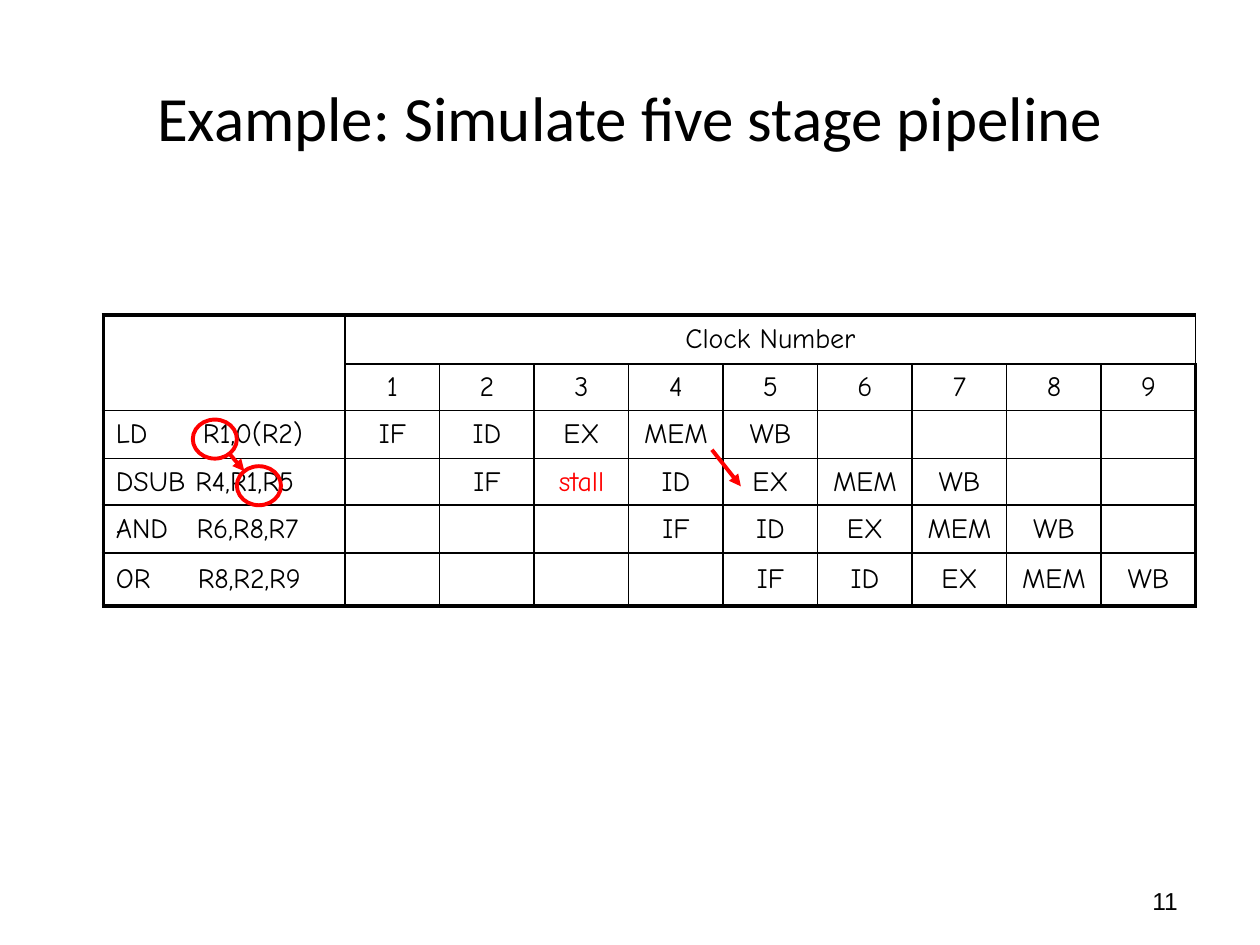
"""Builds a slide that traces four instructions through a five stage pipeline."""
from lxml import etree
from pptx import Presentation, util as u
from pptx.dml.color import RGBColor
from pptx.enum import shapes, text
from pptx.oxml import ns

COLUMNS, ROWS = 100, 75
SLIDE_WIDTH, SLIDE_HEIGHT = u.Inches(10), u.Inches(7.5)
BLACK, RED = "000000", "FF0000"
THIN, THICK = u.Pt(1), u.Pt(2.25)
CYCLES = 9
LABEL_WIDTH, CYCLE_WIDTH = 19.2, 7.5
ROW_HEIGHTS = [3.9, 3.7, 3.8, 3.7, 3.8, 4.2]
PROGRAM = [
    ("LD", "R1,0(R2)", 6.9, 1, ["IF", "ID", "EX", "MEM", "WB"]),
    ("DSUB", "R4,R1,R5", 6.3, 2, ["IF", "stall", "ID", "EX", "MEM", "WB"]),
    ("AND", "R6,R8,R7", 6.4, 4, ["IF", "ID", "EX", "MEM", "WB"]),
    ("OR", "R8,R2,R9", 6.5, 5, ["IF", "ID", "EX", "MEM", "WB"]),
]


def color(hex_string):
    """Turn a hex string into a colour."""
    return RGBColor.from_string(hex_string)


def across(columns):
    """Length of a number of grid columns."""
    return u.Emu(round(SLIDE_WIDTH * columns / COLUMNS))


def down(rows):
    """Length of a number of grid rows."""
    return u.Emu(round(SLIDE_HEIGHT * rows / ROWS))


def place(box):
    """Turn a grid box into left, top, width and height."""
    left, top, width, height = box
    return across(left), down(top), across(width), down(height)


def add_run(paragraph, words, size, font, hex_string=BLACK):
    """Add one formatted run."""
    run = paragraph.add_run()
    run.text = words
    run.font.size, run.font.name = u.Pt(size), font
    run.font.color.rgb = color(hex_string)


def add_line_of_text(slide, box, words, size, font, align):
    """Place one line of text in the middle of a box."""
    frame = slide.shapes.add_textbox(*place(box)).text_frame
    frame.word_wrap = True
    frame.vertical_anchor = text.MSO_ANCHOR.MIDDLE
    frame.paragraphs[0].alignment = align
    add_run(frame.paragraphs[0], words, size, font)


def set_borders(cell, **widths):
    """Draw the black borders of a cell, one width for each side."""
    properties = cell._tc.get_or_add_tcPr()
    for index, side in enumerate("LRTB"):
        border = etree.Element(ns.qn(f"a:ln{side}"), w=str(widths[side]))
        fill = etree.SubElement(border, ns.qn("a:solidFill"))
        etree.SubElement(fill, ns.qn("a:srgbClr"), val=BLACK)
        properties.insert(index, border)


def write_cell(cell, words, align=text.PP_ALIGN.CENTER, hex_string=BLACK):
    """Write one entry of the pipeline table and return its paragraph."""
    cell.margin_top = cell.margin_bottom = u.Inches(0.05)
    paragraph = cell.text_frame.paragraphs[0]
    paragraph.alignment, paragraph.space_before = align, u.Pt(3.2)
    add_run(paragraph, words, 16, "Comic Neue", hex_string)
    return paragraph


def set_tab(paragraph, columns):
    """Line the operands up at a tab stop."""
    stops = etree.SubElement(paragraph._p.get_or_add_pPr(), ns.qn("a:tabLst"))
    etree.SubElement(stops, ns.qn("a:tab"), pos=str(across(columns)), algn="l")


def add_pipeline_table(slide, box):
    """Place the table of instructions against clock cycles."""
    last_row, last_column = len(ROW_HEIGHTS) - 1, CYCLES
    table = slide.shapes.add_table(last_row + 1, last_column + 1, *place(box)).table
    table.first_row = table.horz_banding = False
    for index, column in enumerate(table.columns):
        column.width = across(CYCLE_WIDTH if index else LABEL_WIDTH)
    for row, height in zip(table.rows, ROW_HEIGHTS):
        row.height = down(height)
    for r in range(last_row + 1):
        for c in range(last_column + 1):
            cell = table.cell(r, c)
            cell.fill.background()
            cell.vertical_anchor = text.MSO_ANCHOR.MIDDLE
            cell.margin_top = cell.margin_bottom = 0
            set_borders(cell, L=THIN if c else THICK, T=THIN if r else THICK,
                        R=THICK if c == last_column else THIN,
                        B=THICK if r == last_row else THIN)
    table.cell(0, 0).merge(table.cell(1, 0))
    table.cell(0, 1).merge(table.cell(0, last_column))
    write_cell(table.cell(0, 1), "Clock Number")
    for cycle in range(1, CYCLES + 1):
        write_cell(table.cell(1, cycle), str(cycle))
    for r, (opcode, operands, stop, start, stages) in enumerate(PROGRAM, 2):
        label = write_cell(table.cell(r, 0), f"{opcode}\t{operands}", text.PP_ALIGN.LEFT)
        set_tab(label, stop)
        for cycle, stage in enumerate(stages, start):
            write_cell(table.cell(r, cycle), stage,
                       hex_string=RED if stage == "stall" else BLACK)


def add_ring(slide, box):
    """Circle a register in red."""
    ring = slide.shapes.add_shape(shapes.MSO_SHAPE.OVAL, *place(box))
    ring.shadow.inherit = False
    ring.fill.background()
    ring.line.color.rgb, ring.line.width = color(RED), THICK


def add_arrow(slide, start, end):
    """Draw a red arrow between two grid points."""
    arrow = slide.shapes.add_connector(
        shapes.MSO_CONNECTOR.STRAIGHT, across(start[0]), down(start[1]),
        across(end[0]), down(end[1]))
    arrow.line.color.rgb, arrow.line.width = color(RED), THICK
    etree.SubElement(arrow.line._get_or_add_ln(), ns.qn("a:tailEnd"), type="triangle")
    etree.SubElement(arrow._element.spPr, ns.qn("a:effectLst"))


def add_hazard_marks(slide, box):
    """Mark the dependence on R1 and its forwarding over the table."""
    left, top = box[:2]
    add_arrow(slide, (left + 10, top + 11), (left + 11.2, top + 12.4))
    for x, y in [(7.1, 8.3), (10.6, 12)]:
        add_ring(slide, (left + x, top + y, 3.5, 3.1))
    add_arrow(slide, (left + 48.3, top + 10.7), (left + 50.6, top + 13.6))


def main():
    """Build and save the slide."""
    deck = Presentation()
    deck.slide_width, deck.slide_height = SLIDE_WIDTH, SLIDE_HEIGHT
    slide = deck.slides.add_slide(deck.slide_layouts[6])
    table_box = (8.2, 25, LABEL_WIDTH + CYCLES * CYCLE_WIDTH, sum(ROW_HEIGHTS))
    add_line_of_text(slide, (5, 3, 90, 12.5), "Example: Simulate five stage pipeline",
                     36, "Calibri", text.PP_ALIGN.CENTER)
    add_pipeline_table(slide, table_box)
    add_hazard_marks(slide, table_box)
    add_line_of_text(slide, (71.7, 69.5, 23.3, 4), "11 ", 14, "Arial",
                     text.PP_ALIGN.RIGHT)
    deck.save("out.pptx")


if __name__ == "__main__":
    main()
